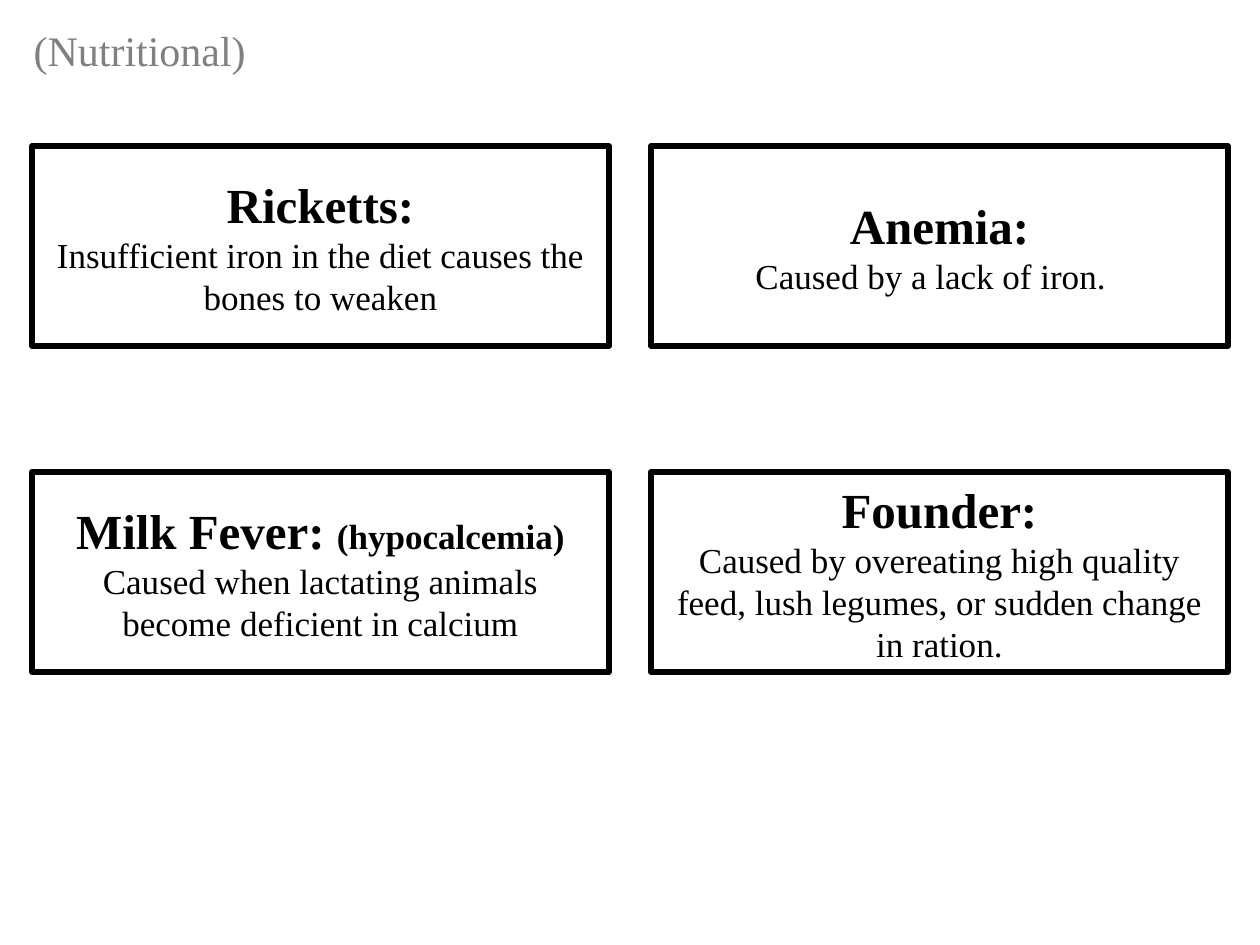
from pptx import Presentation
from pptx.dml.color import RGBColor
from pptx.enum.shapes import MSO_SHAPE
from pptx.enum.text import MSO_ANCHOR, MSO_AUTO_SIZE, PP_ALIGN
from pptx.util import Emu, Pt

RECTANGLE = MSO_SHAPE.RECTANGLE
MIDDLE = MSO_ANCHOR.MIDDLE
NO_AUTOFIT = MSO_AUTO_SIZE.NONE
LEFT, CENTER = PP_ALIGN.LEFT, PP_ALIGN.CENTER

PX_PER_INCH = 126
FONT = "Times New Roman"
BLACK, GRAY = "000000", "808080"
TITLE_ONLY = 5

# Grid of disease boxes, in px
GRID_LEFT, GRID_TOP = 32, 146
BOX_WIDTH, BOX_HEIGHT = 577, 200
COLUMN_STEP, ROW_STEP = 619, 326

# Rows of (name, remark after the name, cause)
DISEASES = [
    [("Ricketts:", "",
      "Insufficient iron in the diet causes the bones to weaken"),
     ("Anemia:", "", "Caused by a lack of iron.  ")],
    [("Milk Fever: ", "(hypocalcemia)",
      "Caused when lactating animals become deficient in calcium"),
     ("Founder:", "",
      "Caused by overeating high quality feed, lush legumes, "
      "or sudden change in ration.")],
]


def px(length):
    return Emu(round(length * 914400 / PX_PER_INCH))


def color(hex_string):
    return RGBColor.from_string(hex_string)


def add_text(para, text, size=20, bold=False, fill=BLACK, align=CENTER):
    para.alignment = align
    span = para.add_run()
    span.text = text
    span.font.name = FONT
    span.font.size = Pt(size)
    span.font.bold = bold
    span.font.color.rgb = color(fill)


def set_title(page, text):
    title = page.shapes.title
    title.left, title.top = px(21), px(18)
    title.width, title.height = px(240), px(63)
    frame = title.text_frame
    frame.auto_size = NO_AUTOFIT
    frame.word_wrap = False
    frame.vertical_anchor = MIDDLE
    add_text(frame.paragraphs[0], text, size=24, fill=GRAY, align=LEFT)


def add_disease_box(page, left, top, name, remark, cause):
    box = page.shapes.add_shape(
        RECTANGLE, px(left), px(top), px(BOX_WIDTH), px(BOX_HEIGHT))
    box.shadow.inherit = False
    box.fill.background()
    box.line.color.rgb = color(BLACK)
    box.line.width = Pt(3.25)
    frame = box.text_frame
    frame.word_wrap = True
    frame.vertical_anchor = MIDDLE
    heading = frame.paragraphs[0]
    add_text(heading, name, size=28, bold=True)
    if remark:
        add_text(heading, remark, bold=True)
    add_text(frame.add_paragraph(), cause)


def main():
    deck = Presentation()
    deck.slide_width, deck.slide_height = px(1260), px(945)
    page = deck.slides.add_slide(deck.slide_layouts[TITLE_ONLY])

    # Heading
    set_title(page, "(Nutritional)")

    # Two by two grid of diseases
    for row, diseases in enumerate(DISEASES):
        for column, disease in enumerate(diseases):
            add_disease_box(page, GRID_LEFT + column * COLUMN_STEP,
                            GRID_TOP + row * ROW_STEP, *disease)

    deck.save("out.pptx")


if __name__ == "__main__":
    main()
